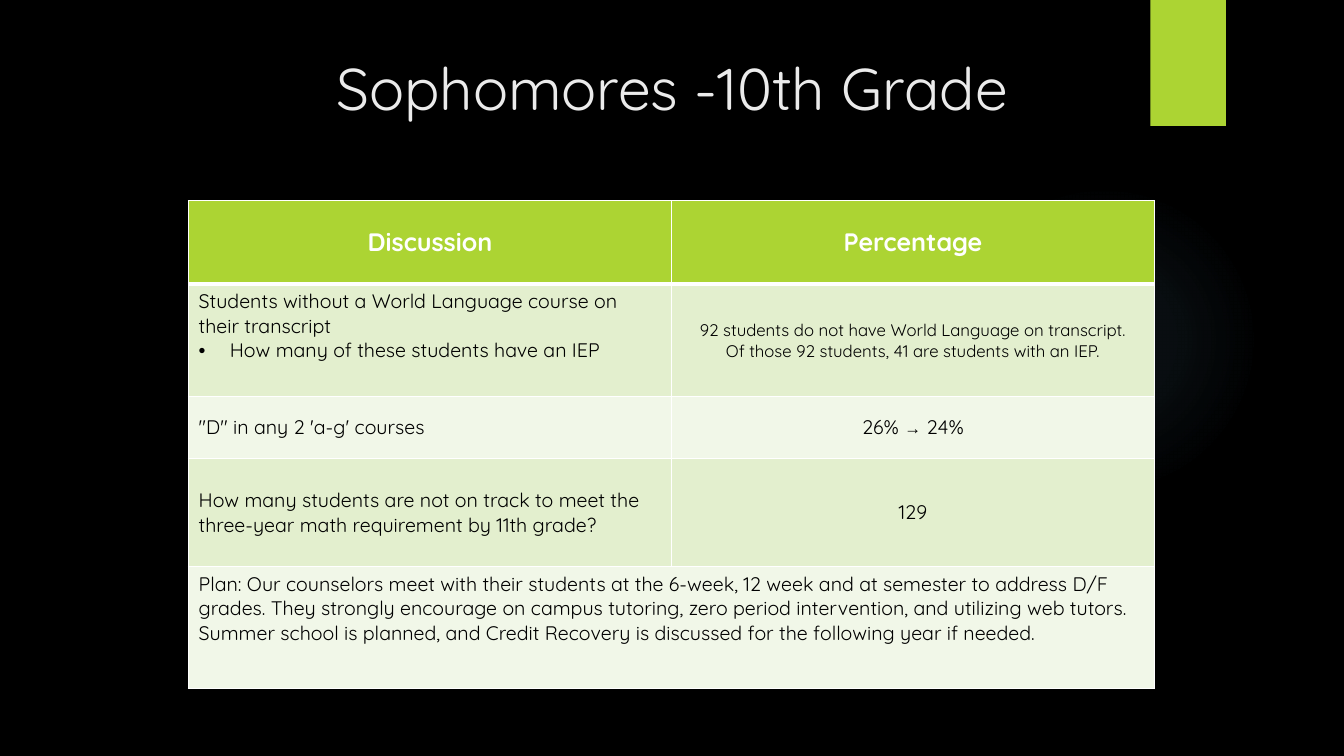
"""Build the sophomore counseling slide: a title and a discussion table."""
from lxml import etree
from pptx import Presentation
from pptx.dml.color import RGBColor
from pptx.enum.shapes import MSO_SHAPE
from pptx.enum.text import MSO_ANCHOR, PP_ALIGN
from pptx.oxml import parse_xml
from pptx.oxml.ns import qn
from pptx.util import Inches, Pt

TITLE = "Sophomores -10th Grade"
HEADERS = ["Discussion", "Percentage"]
BULLET = "• "
ARROW = "→"
ROWS = [
    (["Students without a World Language course on their transcript",
      BULLET + "How many of these students have an IEP"],
     ["92 students do not have World Language on transcript.",
      "Of those 92 students, 41 are students with an IEP."]),
    (["\"D\" in any 2 'a-g' courses"], ["26% → 24%"]),
    (["How many students are not on track to meet the three-year math "
      "requirement by 11th grade?"], ["129"]),
]
PLAN = ("Plan: Our counselors meet with their students at the 6-week, 12 week and at "
        "semester to address D/F grades. They strongly encourage on campus tutoring, "
        "zero period intervention, and utilizing web tutors. Summer school is planned, "
        "and Credit Recovery is discussed for the following year if needed.")

FONT, ARROW_FONT = "Quicksand", "Times New Roman"
BLACK = RGBColor(0x00, 0x00, 0x00)
WHITE = RGBColor(0xFF, 0xFF, 0xFF)
TITLE_COLOR = RGBColor(0xEB, 0xEB, 0xEB)
GREEN = RGBColor(0xAC, 0xD4, 0x33)
GLOW = RGBColor(0x7A, 0xC4, 0xF0)
BANDS = [RGBColor(0xE3, 0xEF, 0xCE), RGBColor(0xF1, 0xF7, 0xE8)]
TOP, MIDDLE = MSO_ANCHOR.TOP, MSO_ANCHOR.MIDDLE
LEFT, CENTER = PP_ALIGN.LEFT, PP_ALIGN.CENTER
OVAL, RECTANGLE = MSO_SHAPE.OVAL, MSO_SHAPE.RECTANGLE

COLUMN_WIDTH = 4.79
ROW_HEIGHTS = [0.83, 1.11, 0.62, 1.07, 1.21]
GLOW_STOPS = [(0, 7), (36, 6), (69, 0)]
BULLET_INDENT = Inches(0.31)
NAMESPACE = 'xmlns:a="http://schemas.openxmlformats.org/drawingml/2006/main"'


def add_plain_shape(slide, kind, left, top, width, height, color):
    shape = slide.shapes.add_shape(kind, Inches(left), Inches(top), Inches(width), Inches(height))
    shape.shadow.inherit = False
    shape.fill.solid()
    shape.fill.fore_color.rgb = color
    shape.line.fill.background()
    return shape


def add_glow(slide):
    shape = add_plain_shape(slide, OVAL, 9.41, 1.83, 3.08, 3.08, GLOW)
    stops = "".join(
        f'<a:gs pos="{position * 1000}"><a:srgbClr val="{GLOW}">'
        f'<a:alpha val="{opacity * 1000}"/></a:srgbClr></a:gs>'
        for position, opacity in GLOW_STOPS)
    gradient = parse_xml(
        f'<a:gradFill {NAMESPACE}><a:gsLst>{stops}</a:gsLst><a:path path="circle">'
        '<a:fillToRect l="50000" t="50000" r="50000" b="50000"/></a:path></a:gradFill>')
    properties = shape.element.spPr
    properties.replace(properties.find(qn("a:solidFill")), gradient)


def style_font(font, size, color, bold=False, name=FONT):
    font.name, font.size, font.bold = name, Pt(size), bold
    font.color.rgb = color


def add_title(slide):
    box = slide.shapes.add_textbox(Inches(1.52), Inches(0.46), Inches(10.29), Inches(1.53))
    box.text_frame.word_wrap = True
    paragraph = box.text_frame.paragraphs[0]
    paragraph.text = TITLE
    paragraph.alignment = CENTER
    style_font(paragraph.font, 42, TITLE_COLOR)


def add_bullet(paragraph):
    properties = paragraph._p.get_or_add_pPr()
    properties.set("marL", str(BULLET_INDENT))
    properties.set("indent", str(-BULLET_INDENT))
    etree.SubElement(properties, qn("a:buFont")).set("typeface", "Arial")
    etree.SubElement(properties, qn("a:buChar")).set("char", BULLET.strip())


def set_borders(cell, top, bottom):
    properties = cell._tc.get_or_add_tcPr()
    for index, (side, width) in enumerate(
            [("lnL", 1), ("lnR", 1), ("lnT", top), ("lnB", bottom)]):
        properties.insert(index, parse_xml(
            f'<a:{side} {NAMESPACE} w="{Pt(width)}"><a:solidFill>'
            f'<a:srgbClr val="{WHITE}"/></a:solidFill></a:{side}>'))


def fill_cell(cell, lines, fill, alignment, anchor, size=14, color=BLACK, bold=False):
    cell.fill.solid()
    cell.fill.fore_color.rgb = fill
    cell.vertical_anchor = anchor
    for index, line in enumerate(lines):
        frame = cell.text_frame
        paragraph = frame.add_paragraph() if index else frame.paragraphs[0]
        paragraph.alignment = alignment
        if line.startswith(BULLET):
            add_bullet(paragraph)
        style_font(paragraph.font, size, color, bold)
        before, arrow, after = line.removeprefix(BULLET).partition(ARROW)
        paragraph.add_run().text = before
        if arrow:
            arrow_run = paragraph.add_run()
            arrow_run.text = arrow
            style_font(arrow_run.font, 12, color, name=ARROW_FONT)
            paragraph.add_run().text = after


def add_discussion_table(slide):
    table = slide.shapes.add_table(
        len(ROW_HEIGHTS), len(HEADERS), Inches(1.87), Inches(1.99),
        Inches(COLUMN_WIDTH * len(HEADERS)), Inches(sum(ROW_HEIGHTS))).table
    for column in table.columns:
        column.width = Inches(COLUMN_WIDTH)
    for row, height in zip(table.rows, ROW_HEIGHTS):
        row.height = Inches(height)

    for index, header in enumerate(HEADERS):
        fill_cell(table.cell(0, index), [header], GREEN, CENTER, MIDDLE, 18, WHITE, True)
    for index, (topic, result) in enumerate(ROWS, start=1):
        band = BANDS[(index - 1) % 2]
        fill_cell(table.cell(index, 0), topic, band, LEFT, TOP if len(topic) > 1 else MIDDLE)
        fill_cell(table.cell(index, 1), result, band, CENTER, MIDDLE,
                  12 if len(result) > 1 else 14)
    last = len(ROW_HEIGHTS) - 1
    table.cell(last, 0).merge(table.cell(last, 1))
    fill_cell(table.cell(last, 0), [PLAN], BANDS[1], LEFT, TOP)

    for index, row in enumerate(table.rows):
        for cell in row.cells:
            set_borders(cell, 3 if index == 1 else 1, 3 if index == 0 else 1)


def main():
    presentation = Presentation()
    presentation.slide_width = Inches(13.33)
    presentation.slide_height = Inches(7.5)
    slide = presentation.slides.add_slide(presentation.slide_layouts[6])
    slide.background.fill.solid()
    slide.background.fill.fore_color.rgb = BLACK
    add_glow(slide)
    add_plain_shape(slide, RECTANGLE, 11.41, 0, 0.75, 1.25, GREEN)
    add_title(slide)
    add_discussion_table(slide)
    presentation.save("out.pptx")


if __name__ == "__main__":
    main()
